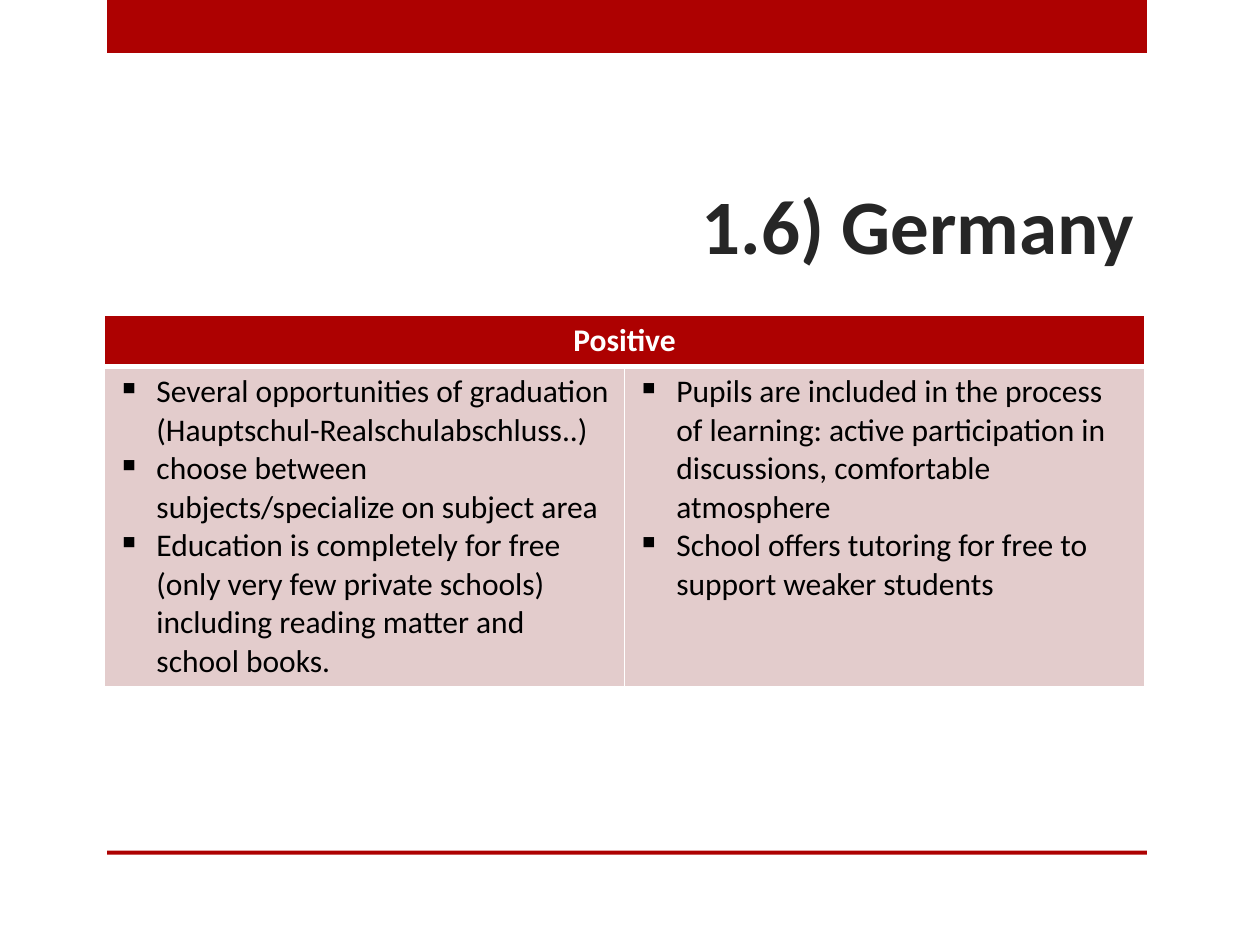
from lxml import etree
from pptx import Presentation
from pptx import util as u
from pptx.dml.color import RGBColor
from pptx.enum import shapes, text
from pptx.oxml import ns

COLORS = {
    "red": "AD0101",
    "pink": "E3CCCC",
    "white": "FFFFFF",
    "black": "000000",
    "title": "262626",
}
FONT = "Calibri"
LEFT, WIDTH = 2.11, 20.96
POSITIVES = [
    [
        "Several opportunities of graduation (Hauptschul-Realschulabschluss..)",
        "choose between subjects/specialize on subject area",
        "Education is completely for free (only very few private schools) "
        "including reading matter and school books.",
    ],
    [
        "Pupils are included in the process of learning: active participation "
        "in discussions, comfortable atmosphere",
        "School offers tutoring for free to support weaker students",
    ],
]


def rgb(name):
    return RGBColor.from_string(COLORS[name])


def style(p, size, color, bold=False, align=text.PP_ALIGN.LEFT):
    p.alignment = align
    p.font.name = FONT
    p.font.size = u.Pt(size)
    p.font.bold = bold
    p.font.color.rgb = rgb(color)


def add_bar(s, top, height):
    bar = s.shapes.add_shape(
        shapes.MSO_SHAPE.RECTANGLE, u.Cm(2.16), u.Cm(top), u.Cm(WIDTH), u.Cm(height)
    )
    bar.shadow.inherit = False
    bar.fill.solid()
    bar.fill.fore_color.rgb = rgb("red")
    bar.line.fill.background()


def set_title(s, words):
    sp = s.shapes.title
    sp.left, sp.top, sp.width, sp.height = map(u.Cm, (LEFT, 1.12, 21.01, 4.45))
    tf = sp.text_frame
    tf.text = words
    tf.auto_size = text.MSO_AUTO_SIZE.NONE
    tf.vertical_anchor = text.MSO_ANCHOR.BOTTOM
    style(tf.paragraphs[0], 44, "title", True, text.PP_ALIGN.RIGHT)


def add_bullet(p):
    pPr = p._p.get_or_add_pPr()
    indent = u.Cm(0.79)
    pPr.set("marL", str(indent))
    pPr.set("indent", str(-indent))
    bullet = etree.Element(ns.qn("a:buChar"), char="▪")
    pPr.insert(0, bullet)


def format_cell(cell, fill, **widths):
    cell.fill.solid()
    cell.fill.fore_color.rgb = rgb(fill)
    tcPr = cell._tc.get_or_add_tcPr()
    for i, side in enumerate("LRTB"):
        ln = etree.Element(ns.qn(f"a:ln{side}"), w=str(u.Pt(widths.get(side, 1))))
        line_fill = etree.SubElement(ln, ns.qn("a:solidFill"))
        etree.SubElement(line_fill, ns.qn("a:srgbClr"), val=COLORS["white"])
        tcPr.insert(i, ln)


def add_positives(s):
    table = s.shapes.add_table(
        2, 2, u.Cm(LEFT), u.Cm(6.35), u.Cm(WIDTH), u.Cm(7.49)
    ).table
    table.horz_banding = False
    for row, height in zip(table.rows, (1.04, 6.45)):
        row.height = u.Cm(height)

    header = table.cell(0, 0)
    header.merge(table.cell(0, 1))
    header.text = "Positive"
    style(header.text_frame.paragraphs[0], 18, "white", True, text.PP_ALIGN.CENTER)
    for cell in table.rows[0].cells:
        format_cell(cell, "red", B=3)

    for cell, points in zip(table.rows[1].cells, POSITIVES):
        cell.text = "\n".join(points)
        for p in cell.text_frame.paragraphs:
            style(p, 18, "black")
            add_bullet(p)
        format_cell(cell, "pink", T=3)


def main():
    prs = Presentation()
    prs.slide_width, prs.slide_height = u.Cm(25.4), u.Cm(19.05)
    s = prs.slides.add_slide(prs.slide_layouts[5])
    add_bar(s, 0, 1.07)
    add_bar(s, 17.15, 0.08)
    set_title(s, "1.6) Germany")
    add_positives(s)
    prs.save("out.pptx")


if __name__ == "__main__":
    main()
